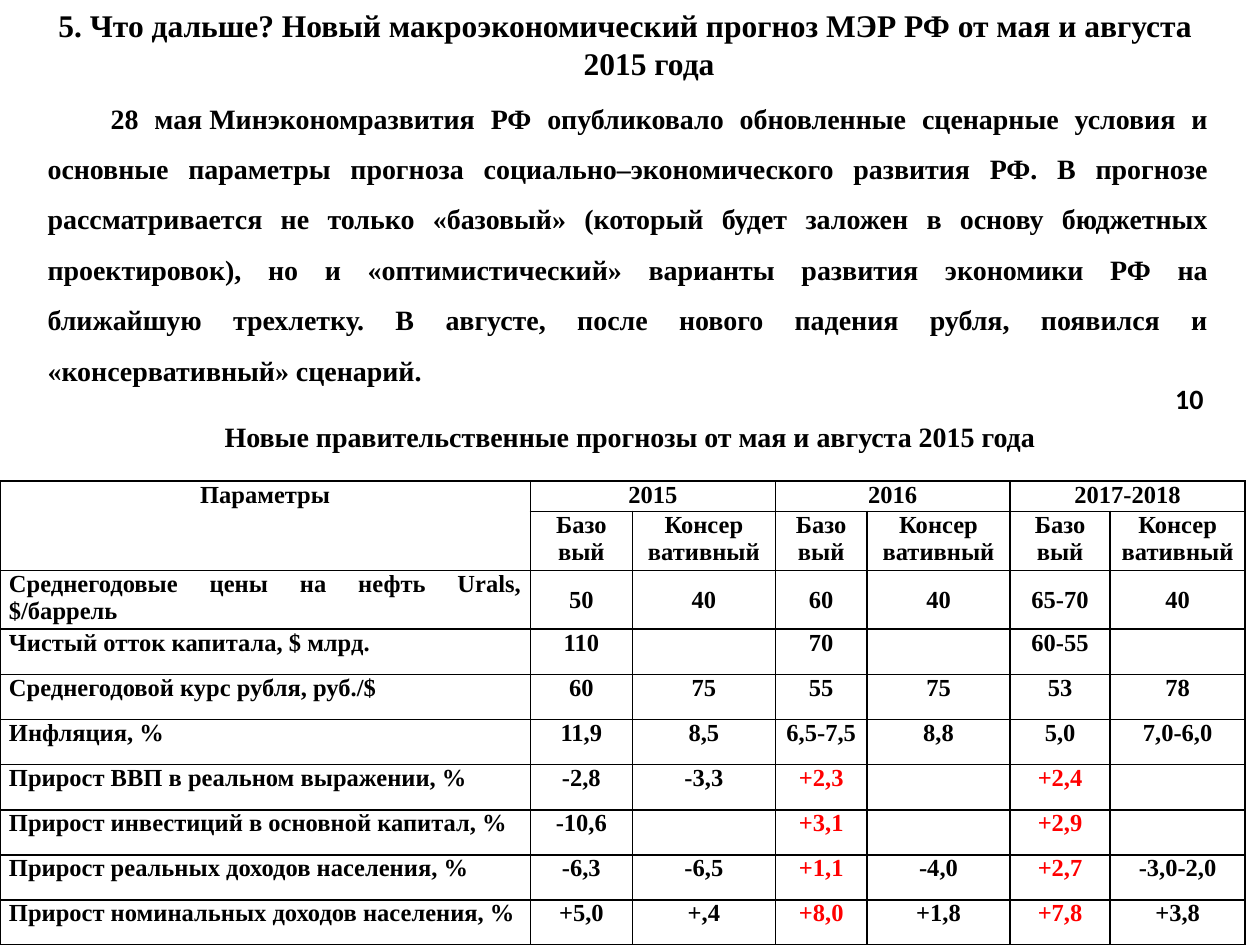
from dataclasses import dataclass

from lxml.etree import SubElement
from pptx import Presentation
from pptx.dml.color import RGBColor
from pptx.enum.text import MSO_ANCHOR as Anchor, MSO_AUTO_SIZE as AutoSize, PP_ALIGN as Align
from pptx.oxml.ns import qn
from pptx.util import Cm, Pt


@dataclass(frozen=True)
class Theme:
    serif: str = "Times New Roman"
    sans: str = "Calibri"
    ink: RGBColor = RGBColor(0, 0, 0)
    growth: RGBColor = RGBColor(255, 0, 0)
    title: Pt = Pt(18)
    body: Pt = Pt(16)
    cell: Pt = Pt(14)
    border: Pt = Pt(1)


THEME = Theme()

TITLE = "5. Что дальше? Новый макроэкономический прогноз МЭР РФ от мая и августа 2015 года"
INTRO = (
    "28 мая\u00a0Минэкономразвития РФ опубликовало обновленные сценарные условия и основные "
    "параметры прогноза социально–экономического развития РФ. В прогнозе рассматривается "
    "не только «базовый» (который будет заложен в основу бюджетных проектировок), но и "
    "«оптимистический» варианты развития экономики РФ на ближайшую трехлетку. В августе, "
    "после нового падения рубля, появился и «консервативный» сценарий."
)
CAPTION = "Новые правительственные прогнозы от мая и августа 2015 года"

YEARS = ["2015", "2016", "2017-2018"]
SCENARIOS = ["Базо вый", "Консер вативный"]
GROWTH_PREFIX = "Прирост"
FORECASTS = [
    ["Среднегодовые цены на нефть Urals, $/баррель", "50", "40", "60", "40", "65-70", "40"],
    ["Чистый отток капитала, $ млрд.", "110", "", "70", "", "60-55", ""],
    ["Среднегодовой курс рубля, руб./$", "60", "75", "55", "75", "53", "78"],
    ["Инфляция, %", "11,9", "8,5", "6,5-7,5", "8,8", "5,0", "7,0-6,0"],
    ["Прирост ВВП в реальном выражении, %", "-2,8", "-3,3", "+2,3", "", "+2,4", ""],
    ["Прирост инвестиций в основной капитал, %", "-10,6", "", "+3,1", "", "+2,9", ""],
    ["Прирост реальных доходов населения, %", "-6,3", "-6,5", "+1,1", "-4,0", "+2,7", "-3,0-2,0"],
    ["Прирост номинальных доходов населения, %", "+5,0", "+,4", "+8,0", "+1,8", "+7,8", "+3,8"],
]
COLUMN_WIDTHS = [10.69, 2.06, 2.88, 1.85, 2.88, 2.02, 2.72]
YEAR_ROW_HEIGHT, ROW_HEIGHT = 0.61, 0.91
HEADER_ROWS = 2
BASE_FORECAST_COLUMNS = (3, 5)


def write(frame, text, size, align, font=THEME.serif, color=THEME.ink):
    """Put one bold paragraph into the frame and return it."""
    frame.text = text
    paragraph = frame.paragraphs[0]
    paragraph.alignment = align
    for run in paragraph.runs:
        run.font.name = font
        run.font.size = size
        run.font.bold = True
        run.font.color.rgb = color
    return paragraph


def indent(paragraph, left, first_line):
    properties = paragraph._p.get_or_add_pPr()
    properties.set("marL", str(left))
    properties.set("indent", str(first_line))


def add_title(slide):
    title = slide.shapes.title
    title.left, title.top, title.width, title.height = Cm(0.71), Cm(0), Cm(23.8), Cm(1.8)
    frame = title.text_frame
    frame.vertical_anchor = Anchor.TOP
    frame.auto_size = AutoSize.NONE
    paragraph = write(frame, TITLE, THEME.title, Align.CENTER)
    indent(paragraph, Cm(0.95), -Cm(0.95))


def add_text(slide, box, text, align, anchor=Anchor.MIDDLE, font=THEME.serif):
    frame = slide.shapes.add_textbox(*map(Cm, box)).text_frame
    frame.word_wrap = True
    frame.vertical_anchor = anchor
    return write(frame, text, THEME.body, align, font)


def add_borders(cell):
    properties = cell._tc.get_or_add_tcPr()
    for side in ("lnL", "lnR", "lnT", "lnB"):
        line = SubElement(properties, qn(f"a:{side}"), w=str(THEME.border))
        fill = SubElement(line, qn("a:solidFill"))
        SubElement(fill, qn("a:srgbClr"), val=str(THEME.ink))


def format_cell(cell):
    cell.margin_left = cell.margin_right = Cm(0.18)
    cell.margin_top = cell.margin_bottom = 0
    add_borders(cell)
    cell.fill.background()


def fill_header(table):
    parameters = table.cell(0, 0)
    parameters.merge(table.cell(1, 0))
    write(parameters.text_frame, "Параметры", THEME.cell, Align.CENTER)
    span = len(SCENARIOS)
    for index, year in enumerate(YEARS):
        first = 1 + index * span
        year_cell = table.cell(0, first)
        year_cell.merge(table.cell(0, first + span - 1))
        write(year_cell.text_frame, year, THEME.cell, Align.CENTER)
        for offset, scenario in enumerate(SCENARIOS):
            write(table.cell(1, first + offset).text_frame, scenario, THEME.cell, Align.CENTER)


def fill_forecasts(table):
    for row, forecast in enumerate(FORECASTS, start=HEADER_ROWS):
        is_growth = forecast[0].startswith(GROWTH_PREFIX)
        for column, value in enumerate(forecast):
            cell = table.cell(row, column)
            highlighted = is_growth and column in BASE_FORECAST_COLUMNS
            color = THEME.growth if highlighted else THEME.ink
            align = Align.CENTER if column else Align.JUSTIFY
            write(cell.text_frame, value, THEME.cell, align, color=color)
            if row == HEADER_ROWS and column:
                cell.vertical_anchor = Anchor.MIDDLE


def add_forecast_table(slide):
    row_heights = [YEAR_ROW_HEIGHT] + [ROW_HEIGHT] * (HEADER_ROWS - 1 + len(FORECASTS))
    table = slide.shapes.add_table(
        len(row_heights), len(COLUMN_WIDTHS),
        Cm(0), Cm(9.7), Cm(sum(COLUMN_WIDTHS)), Cm(sum(row_heights)),
    ).table
    table.first_row = table.horz_banding = False
    for column, width in zip(table.columns, COLUMN_WIDTHS):
        column.width = Cm(width)
    for row, height in zip(table.rows, row_heights):
        row.height = Cm(height)
    for cell in table.iter_cells():
        format_cell(cell)
    fill_header(table)
    fill_forecasts(table)


def main():
    deck = Presentation()
    deck.slide_width, deck.slide_height = Cm(25.4), Cm(19.05)
    slide = deck.slides.add_slide(deck.slide_layouts[5])

    add_title(slide)
    intro = add_text(slide, (0.71, 1.55, 23.9, 6.4), INTRO, Align.JUSTIFY)
    intro.line_spacing = 1.5
    indent(intro, 0, Cm(1.27))
    add_forecast_table(slide)
    add_text(slide, (3.48, 8.33, 18.44, 1.63), CAPTION, Align.CENTER, Anchor.TOP)
    add_text(slide, (23.29, 7.52, 1.22, 1.02), "10", Align.RIGHT, font=THEME.sans)

    deck.save("out.pptx")


if __name__ == "__main__":
    main()
